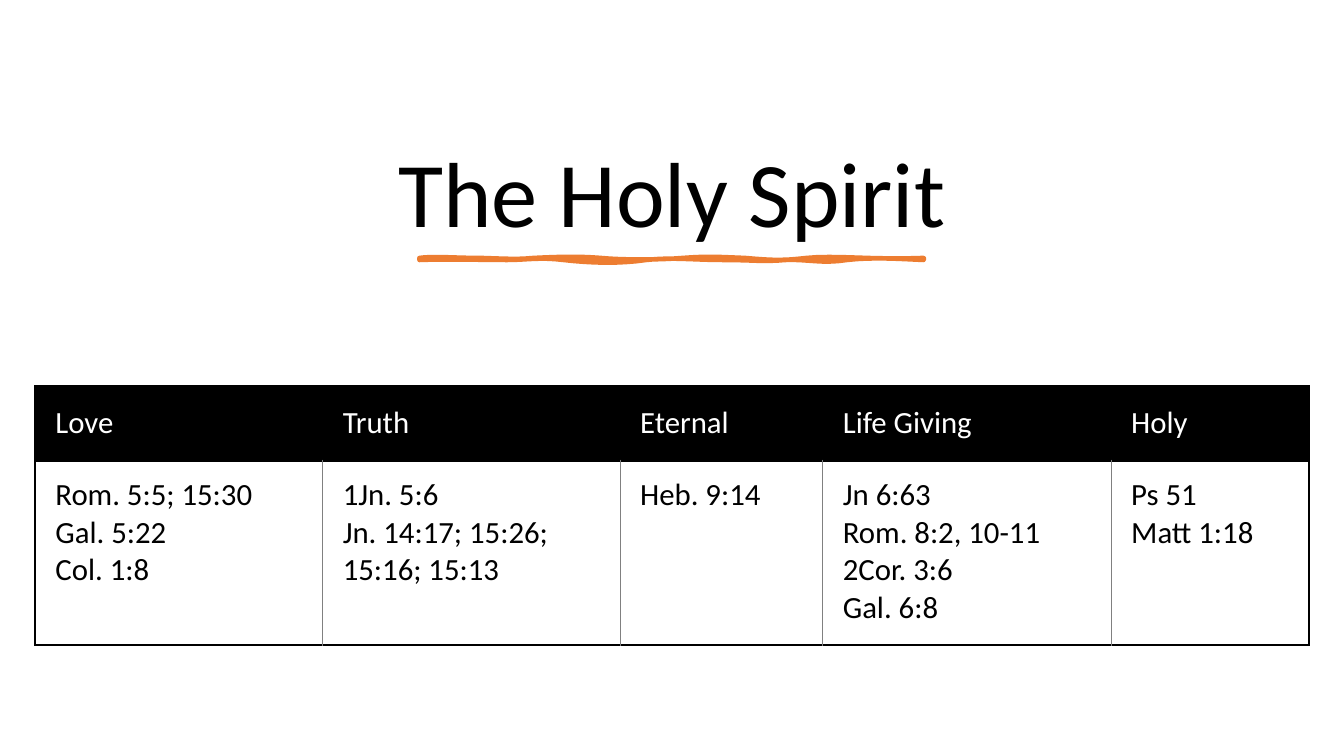
"""Build a slide with a table of Bible references on the Holy Spirit."""
import pptx
import pptx.dml.color
import pptx.enum.text
import pptx.oxml.ns
import pptx.util
from lxml import etree
from pptx.util import Inches

COLORS = {"black": "000000", "white": "FFFFFF", "gray": "808080", "orange": "ED7D31"}
TITLE_FORMAT = {"size": pptx.util.Pt(66), "name": "Calibri"}
CELL_FORMAT = {"size": pptx.util.Pt(22), "name": "Calibri"}
CELL_MARGINS = {
    "margin_left": Inches(0.2),
    "margin_top": Inches(0.16),
    "margin_right": Inches(0.3),
    "margin_bottom": Inches(0.16),
}
COLUMNS = [
    ("Love", 2.85, ["Rom. 5:5; 15:30", "Gal. 5:22", "Col. 1:8"]),
    ("Truth", 2.95, ["1Jn. 5:6", "Jn. 14:17; 15:26; 15:16; 15:13"]),
    ("Eternal", 2.01, ["Heb. 9:14"]),
    ("Life Giving", 2.86, ["Jn 6:63", "Rom. 8:2, 10-11", "2Cor. 3:6", "Gal. 6:8"]),
    ("Holy", 1.96, ["Ps 51", "Matt 1:18"]),
]
ROW_HEIGHTS = [0.74, 1.83]
STROKE_START = (4.16, 2.56)
STROKE_CURVES = [
    [(4.28, 2.54), (4.54, 2.56), (4.73, 2.56)],
    [(4.92, 2.56), (5.09, 2.58), (5.29, 2.56)],
    [(5.49, 2.55), (5.74, 2.54), (5.96, 2.56)],
    [(6.17, 2.58), (6.53, 2.58), (6.77, 2.56)],
    [(7.02, 2.54), (7.14, 2.55), (7.39, 2.56)],
    [(7.63, 2.58), (7.74, 2.59), (8, 2.56)],
    [(8.26, 2.53), (8.67, 2.58), (9.16, 2.56)],
    [(9.17, 2.57), (9.16, 2.57), (9.16, 2.58)],
    [(8.95, 2.57), (8.65, 2.55), (8.4, 2.58)],
    [(8.15, 2.62), (8.01, 2.57), (7.79, 2.58)],
    [(7.56, 2.6), (7.47, 2.58), (7.17, 2.58)],
    [(6.87, 2.58), (6.67, 2.55), (6.41, 2.58)],
    [(6.14, 2.62), (5.85, 2.61), (5.59, 2.58)],
    [(5.34, 2.55), (5.23, 2.58), (5.03, 2.58)],
    [(4.83, 2.58), (4.38, 2.57), (4.16, 2.58)],
]


def rgb(name):
    """Return the named colour."""
    return pptx.dml.color.RGBColor.from_string(COLORS[name])


def write_lines(tf, lines, font_format, color):
    """Write one paragraph for each line of text."""
    for i, line in enumerate(lines):
        p = tf.add_paragraph() if i else tf.paragraphs[0]
        r = p.add_run()
        r.text = line
        for key, value in font_format.items():
            setattr(r.font, key, value)
        r.font.color.rgb = rgb(color)


def add_title(s, text):
    """Add the centred title at the bottom of its box."""
    sp = s.shapes.add_textbox(Inches(0.7), Inches(0.5), Inches(11.93), Inches(2))
    tf = sp.text_frame
    tf.word_wrap = True
    tf.vertical_anchor = pptx.enum.text.MSO_ANCHOR.BOTTOM
    write_lines(tf, [text], TITLE_FORMAT, "black")
    p = tf.paragraphs[0]
    p.alignment = pptx.enum.text.PP_ALIGN.CENTER
    p.line_spacing = 0.9


def curve_points(start, curves, steps=8):
    """Return points along a chain of cubic curves."""
    points = []
    for a, b, end in curves:
        for k in range(1, steps + 1):
            t = k / steps
            u = 1 - t
            points.append(tuple(
                Inches(u**3 * start[i] + 3 * u * u * t * a[i] + 3 * u * t * t * b[i] + t**3 * end[i])
                for i in (0, 1)
            ))
        start = end
    return points


def add_brush_stroke(s):
    """Add the wavy brush stroke under the title."""
    builder = s.shapes.build_freeform(*(Inches(v) for v in STROKE_START))
    builder.add_line_segments(curve_points(STROKE_START, STROKE_CURVES), close=True)
    sp = builder.convert_to_shape()
    sp.shadow.inherit = False
    sp.fill.solid()
    sp.fill.fore_color.rgb = rgb("orange")
    sp.line.color.rgb = rgb("orange")
    sp.line.width = pptx.util.Pt(3.25)
    etree.SubElement(sp.line._get_or_add_ln(), pptx.oxml.ns.qn("a:round"))


def set_borders(cell, borders):
    """Set left, right, top and bottom borders from colour and width pairs."""
    qn = pptx.oxml.ns.qn
    tc_pr = cell._tc.get_or_add_tcPr()
    for i, (side, (color, width)) in enumerate(zip("LRTB", borders)):
        ln = etree.Element(qn(f"a:ln{side}"), w=str(pptx.util.Pt(width)))
        fill = etree.SubElement(ln, qn("a:solidFill"))
        etree.SubElement(fill, qn("a:srgbClr"), val=COLORS[color])
        tc_pr.insert(i, ln)


def format_cell(cell, lines, is_header, borders):
    """Fill in and format one table cell."""
    for key, value in CELL_MARGINS.items():
        setattr(cell, key, value)
    write_lines(cell.text_frame, lines, CELL_FORMAT, "white" if is_header else "black")
    if is_header:
        cell.vertical_anchor = pptx.enum.text.MSO_ANCHOR.MIDDLE
        cell.fill.solid()
        cell.fill.fore_color.rgb = rgb("black")
    else:
        cell.fill.background()
    set_borders(cell, borders)


def add_reference_table(s):
    """Add the table with one column for each attribute."""
    widths = [width for _, width, _ in COLUMNS]
    table = s.shapes.add_table(
        len(ROW_HEIGHTS), len(COLUMNS), Inches(0.35), Inches(3.83),
        Inches(sum(widths)), Inches(sum(ROW_HEIGHTS)),
    ).table
    table.first_row = table.horz_banding = False
    for row, height in zip(table.rows, ROW_HEIGHTS):
        row.height = Inches(height)
    outer, inner = ("black", 1.5), ("gray", 0.5)
    last = len(COLUMNS) - 1
    for c, (heading, width, references) in enumerate(COLUMNS):
        table.columns[c].width = Inches(width)
        left = inner if c else outer
        right = inner if c < last else outer
        format_cell(table.cell(0, c), [heading], True, [outer] * 4)
        format_cell(table.cell(1, c), references, False, [left, right, outer, outer])


def main():
    """Build and save the presentation."""
    prs = pptx.Presentation()
    prs.slide_width, prs.slide_height = Inches(13.33), Inches(7.5)
    s = prs.slides.add_slide(prs.slide_layouts[6])
    s.background.fill.solid()
    s.background.fill.fore_color.rgb = rgb("white")
    add_title(s, "The Holy Spirit")
    add_brush_stroke(s)
    add_reference_table(s)
    prs.save("out.pptx")


if __name__ == "__main__":
    main()
